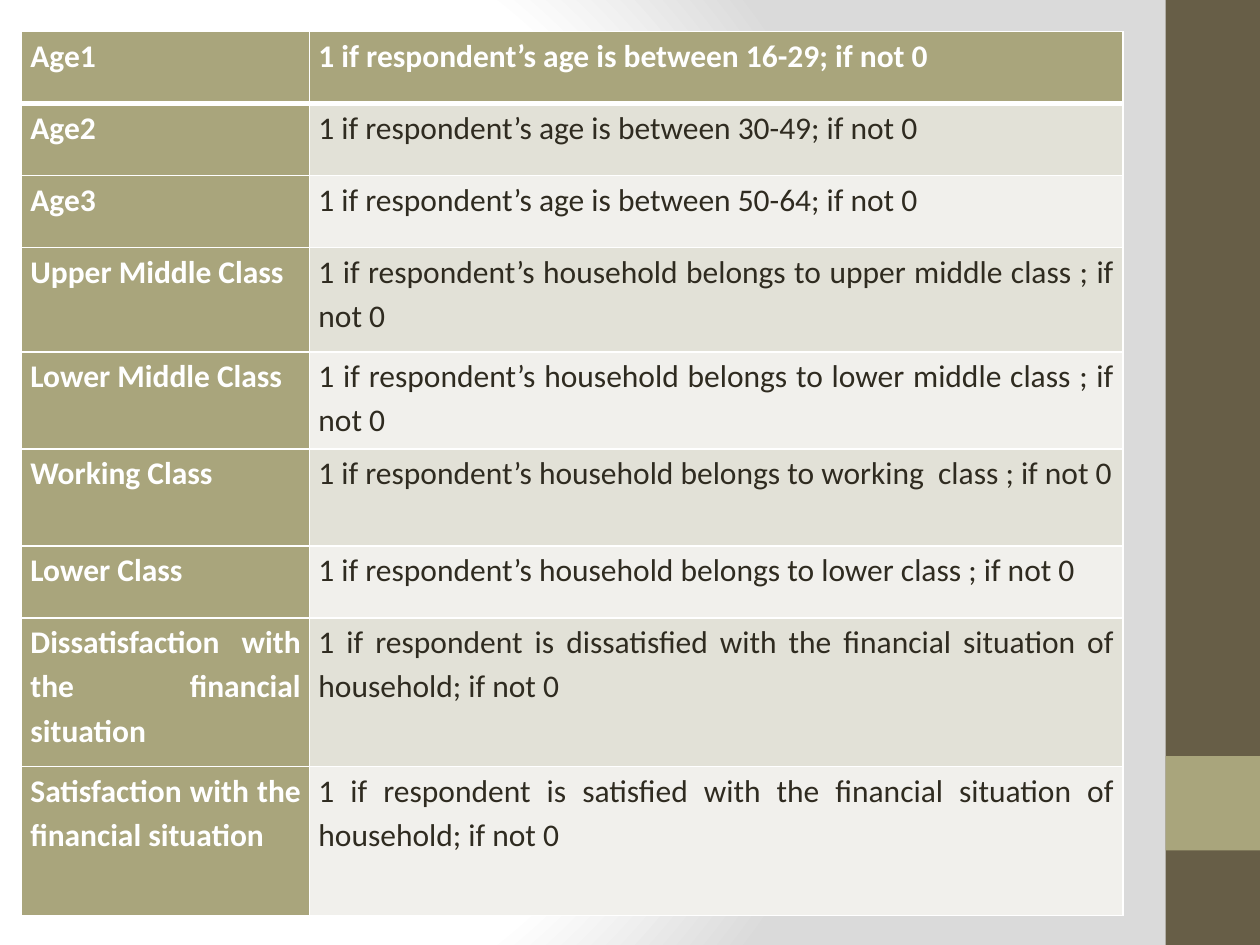
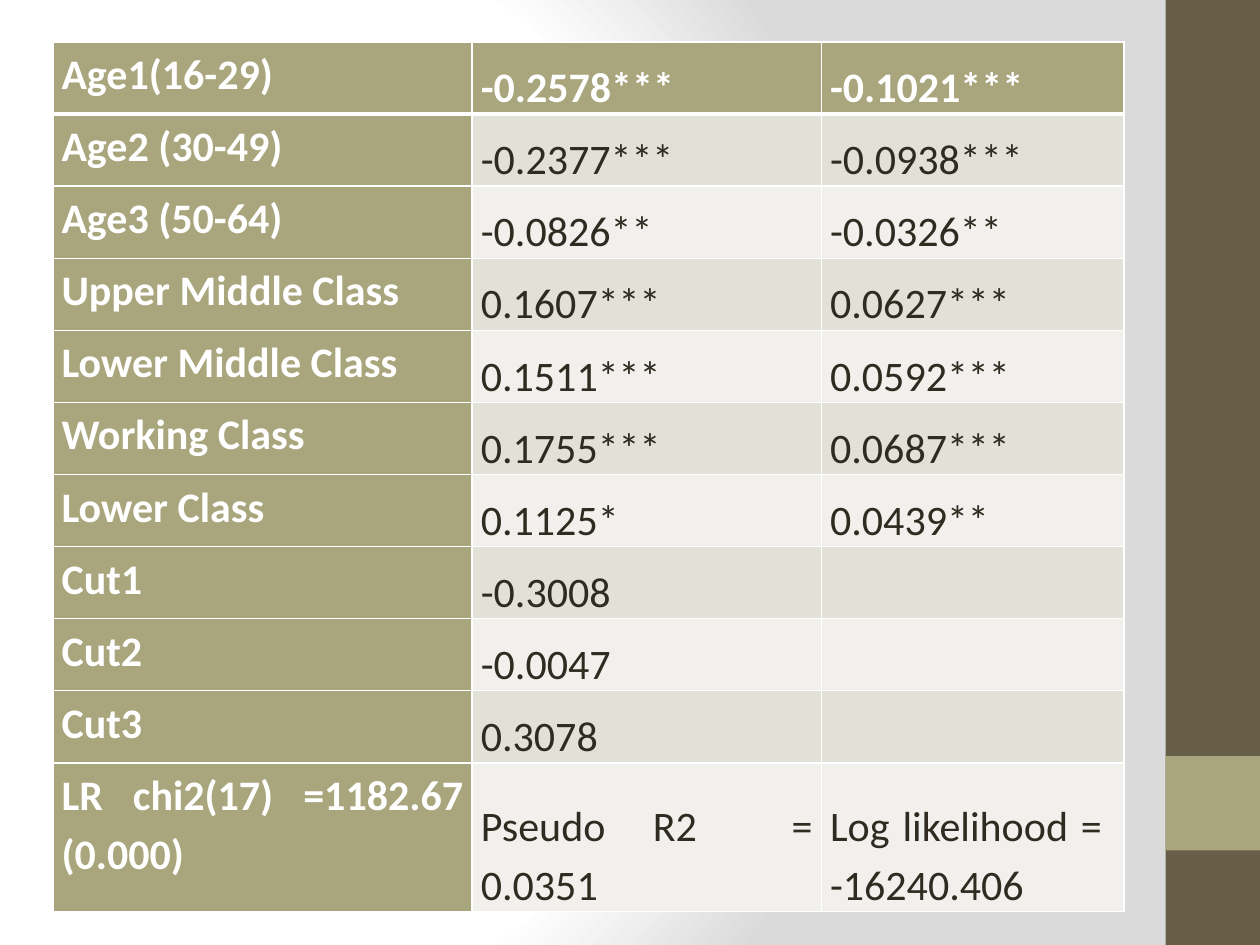
from pptx import Presentation
from pptx.dml.color import RGBColor
from pptx.enum import shapes, text
from pptx.oxml import parse_xml
from pptx.oxml.ns import nsdecls, qn
from pptx.util import Pt

INK = {
    "white": "FFFFFF",
    "grey": "DADADA",
    "brown": "675E47",
    "olive": "A9A57C",
    "dark": "2F2B20",
    "even": "F1F0EC",
    "odd": "E2E1D7",
}
FONT = "Calibri"
ROW, TALL = 41.2, 85

TERMS = [
    ("Age1", "1 if respondent’s age is between 16-29; if not 0"),
    ("Age2", "1 if respondent’s age is between 30-49; if not 0"),
    ("Age3", "1 if respondent’s age is between 50-64; if not 0"),
    ("Upper Middle Class",
     "1 if respondent’s household belongs to upper middle class ; if not 0"),
    ("Lower Middle Class",
     "1 if respondent’s household belongs to lower middle class ; if not 0"),
    ("Working Class",
     "1 if respondent’s household belongs to working  class ; if not 0"),
    ("Lower Class",
     "1 if respondent’s household belongs to lower class ; if not 0"),
    ("Dissatisfaction with the financial situation",
     "1 if respondent is dissatisfied with the financial situation of household; if not 0"),
    ("Satisfaction with the financial situation",
     "1 if respondent is satisfied with the financial situation of household; if not 0"),
]
RESULTS = [
    ("Age1(16-29)", "-0.2578***", "-0.1021***"),
    ("Age2 (30-49)", "-0.2377***", "-0.0938***"),
    ("Age3 (50-64)", "-0.0826**", "-0.0326**"),
    ("Upper Middle Class", "0.1607***", "0.0627***"),
    ("Lower Middle Class", "0.1511***", "0.0592***"),
    ("Working Class", "0.1755***", "0.0687***"),
    ("Lower Class", "0.1125*", "0.0439**"),
    ("Cut1", "-0.3008", ""),
    ("Cut2", "-0.0047", ""),
    ("Cut3", "0.3078", ""),
    ("LR chi2(17) =1182.67 (0.000)", "Pseudo R2  = 0.0351",
     "Log likelihood =  -16240.406"),
]


def color(name):
    return RGBColor.from_string(INK[name])


def set_back(master):
    """Give every slide the round white-to-grey gradient."""
    master.background.fill.gradient()
    old = master.element.find(".//" + qn("a:gradFill"))
    stops = "".join(
        f'<a:gs pos="{pos * 1000}"><a:srgbClr val="{INK[name]}"/></a:gs>'
        for pos, name in ((0, "white"), (75, "white"), (100, "grey")))
    new = parse_xml(
        f'<a:gradFill {nsdecls("a")} rotWithShape="1"><a:gsLst>{stops}</a:gsLst>'
        '<a:path path="circle"><a:fillToRect l="20000" t="50000" r="100000" '
        'b="50000"/></a:path></a:gradFill>')
    old.getparent().replace(old, new)


def add_band(slide, top, height, name):
    band = slide.shapes.add_shape(
        shapes.MSO_SHAPE.RECTANGLE, Pt(666), Pt(top), Pt(54), Pt(height))
    band.shadow.inherit = False
    band.fill.solid()
    band.fill.fore_color.rgb = color(name)
    band.line.fill.background()


def add_slide(deck):
    slide = deck.slides.add_slide(deck.slide_layouts[6])
    add_band(slide, 0, 540, "brown")
    add_band(slide, 432, 54, "olive")
    return slide


def add_edges(cell, row):
    """Draw white borders, with a thick rule under the first row."""
    widths = {"L": 1, "R": 1, "T": 3 if row == 1 else 1, "B": 3 if row == 0 else 1}
    for side, width in widths.items():
        cell._tc.get_or_add_tcPr().append(parse_xml(
            f'<a:ln{side} {nsdecls("a")} w="{Pt(width)}"><a:solidFill>'
            f'<a:srgbClr val="{INK["white"]}"/></a:solidFill></a:ln{side}>'))


def fill_cell(cell, words, row, head, size):
    cell.margin_left = cell.margin_right = Pt(5)
    cell.margin_top = cell.margin_bottom = 0
    add_edges(cell, row)
    cell.fill.solid()
    shade = "olive" if head else "odd" if row % 2 else "even"
    cell.fill.fore_color.rgb = color(shade)
    if not words:
        return
    para = cell.text_frame.paragraphs[0]
    para.alignment = text.PP_ALIGN.JUSTIFY
    para.line_spacing = 1.15
    run = para.add_run()
    run.text = words
    run.font.name = FONT
    run.font.size = Pt(size)
    run.font.bold = head
    run.font.color.rgb = color("white" if head else "dark")


def add_grid(slide, left, top, cols, rows, data, size, anchor):
    """Add a table; anchor places the text of all columns but the first."""
    grid = slide.shapes.add_table(
        len(rows), len(cols), Pt(left), Pt(top), Pt(sum(cols)), Pt(sum(rows))).table
    for col, width in zip(grid.columns, cols):
        col.width = Pt(width)
    for r, (height, line) in enumerate(zip(rows, data)):
        grid.rows[r].height = Pt(height)
        for c, words in enumerate(line):
            cell = grid.cell(r, c)
            fill_cell(cell, words, r, r == 0 or c == 0, size)
            cell.vertical_anchor = anchor if c else text.MSO_ANCHOR.TOP


def main():
    deck = Presentation()
    deck.slide_width, deck.slide_height = Pt(720), Pt(540)
    set_back(deck.slide_master)
    add_grid(add_slide(deck), 12.4, 18, [164.6, 464.8],
             [ROW] * 3 + [59.6, 55.4, 55.4, ROW] + [TALL] * 2,
             TERMS, 18, text.MSO_ANCHOR.TOP)
    add_grid(add_slide(deck), 30.2, 24, [239.6, 199.6, 172.8],
             [ROW] * 10 + [TALL], RESULTS, 24, text.MSO_ANCHOR.BOTTOM)
    deck.save("out.pptx")


if __name__ == "__main__":
    main()
